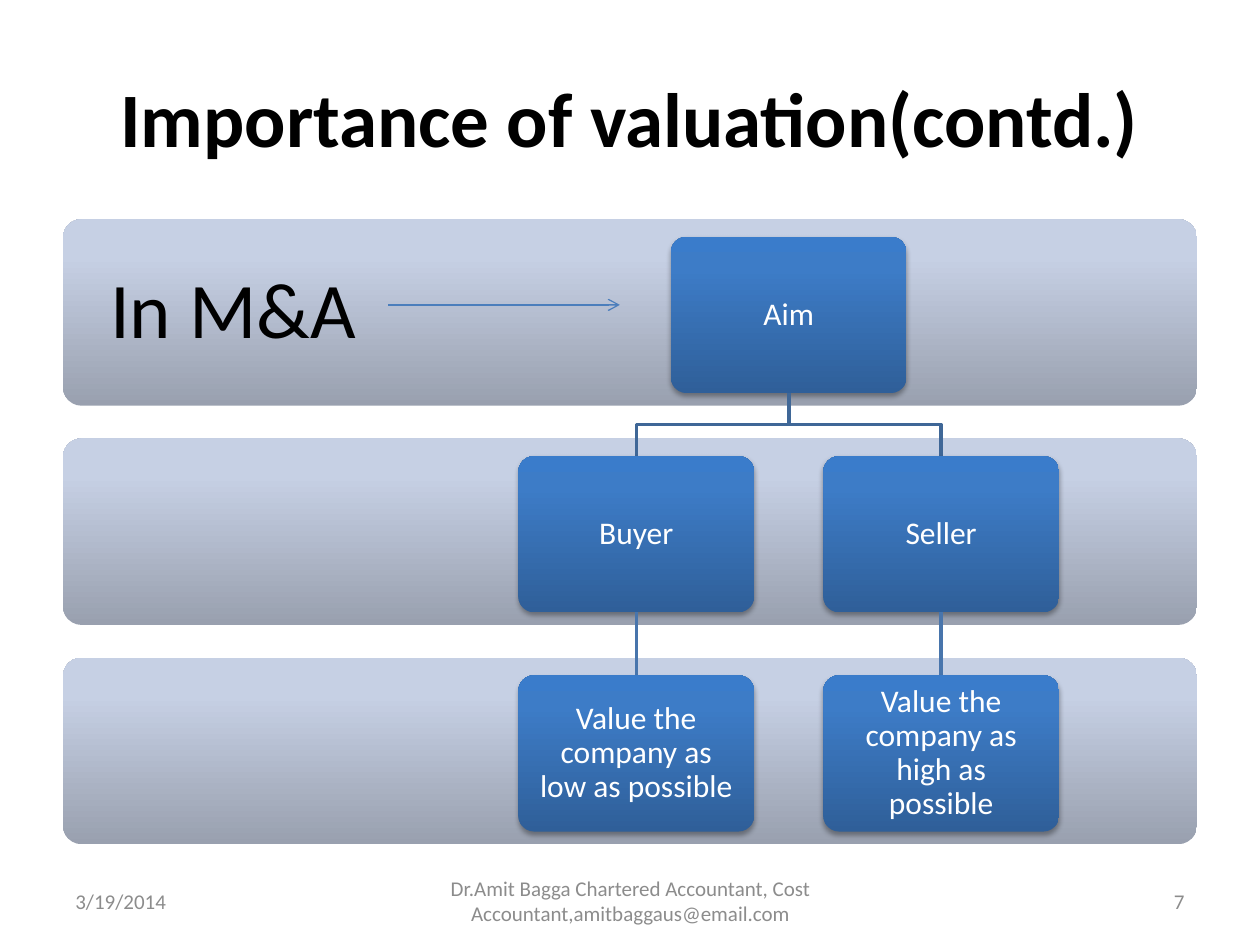
from copy import deepcopy
from dataclasses import dataclass

from lxml.etree import SubElement
from pptx import Presentation
from pptx.dml.color import RGBColor
from pptx.enum.shapes import MSO_CONNECTOR as Connector, MSO_SHAPE as Shape
from pptx.enum.text import MSO_ANCHOR as Anchor, PP_ALIGN as Align
from pptx.oxml.ns import qn
from pptx.util import Inches, Pt

FONT = "Calibri"
ROW_STEP = 1.74
BAND_TOP, BAND_HEIGHT = 1.74, 1.48
CARD_TOP, CARD_WIDTH, CARD_HEIGHT = 1.88, 1.87, 1.24
BUYER_X, AIM_X, SELLER_X = 5.05, 6.26, 7.47
BAND_STOPS = [(0, "99A0AF"), (0.8, "C6D0E4"), (1, "C7D1E5")]
CARD_STOPS = [(0, "2F5F99"), (0.8, "3D7CC7"), (1, "3A7CCB")]


@dataclass
class Card:
    text: str
    center: float
    row: int

    @property
    def top(self) -> float:
        return CARD_TOP + self.row * ROW_STEP

    @property
    def bottom(self) -> float:
        return self.top + CARD_HEIGHT


@dataclass
class Label:
    text: str
    left: float
    top: float
    width: float
    height: float
    size: float
    color: str
    align: Align
    spacing: float = 1.0


def rgb(value: str) -> RGBColor:
    return RGBColor.from_string(value)


def write(frame, text: str, size: float, color: str, align: Align,
          spacing: float = 1.0, bold: bool = False) -> None:
    frame.word_wrap = True
    frame.vertical_anchor = Anchor.MIDDLE
    paragraph = frame.paragraphs[0]
    paragraph.alignment = align
    paragraph.line_spacing = spacing
    run = paragraph.add_run()
    run.text = text
    run.font.name, run.font.size, run.font.bold = FONT, Pt(size), bold
    run.font.color.rgb = rgb(color)


def add_panel(slide, left: float, top: float, width: float, height: float,
              stops: list[tuple[float, str]]):
    """Add a borderless rounded box with a gradient running upwards."""
    shape = slide.shapes.add_shape(Shape.ROUNDED_RECTANGLE, Inches(left), Inches(top),
                                   Inches(width), Inches(height))
    shape.adjustments[0] = 0.1
    shape.shadow.inherit = False
    shape.line.fill.background()
    shape.fill.gradient()
    shape.fill.gradient_angle = 90
    stop_list = shape._element.spPr.find(qn("a:gradFill")).find(qn("a:gsLst"))
    stop_list.append(deepcopy(stop_list[-1]))
    for stop, (position, color) in zip(shape.fill.gradient_stops, stops):
        stop.position = position
        stop.color.rgb = rgb(color)
    return shape


def add_drop_shadow(shape) -> None:
    effects = shape._element.spPr.find(qn("a:effectLst"))
    shadow = SubElement(effects, qn("a:outerShdw"), blurRad=str(Pt(3.1)),
                        dist=str(Pt(1.8)), dir="5400000", rotWithShape="0")
    color = SubElement(shadow, qn("a:srgbClr"), val="000000")
    SubElement(color, qn("a:alpha"), val="35000")


def add_card(slide, card: Card) -> None:
    shape = add_panel(slide, card.center - CARD_WIDTH / 2, card.top,
                      CARD_WIDTH, CARD_HEIGHT, CARD_STOPS)
    add_drop_shadow(shape)
    frame = shape.text_frame
    frame.margin_left = frame.margin_right = Inches(0.11)
    frame.margin_top = frame.margin_bottom = Inches(0.11)
    write(frame, card.text, 18, "FFFFFF", Align.CENTER, 0.9)


def add_line(slide, start: tuple[float, float], end: tuple[float, float],
             color: str, width: float):
    line = slide.shapes.add_connector(Connector.STRAIGHT, *map(Inches, start + end))
    line.line.color.rgb = rgb(color)
    line.line.width = Pt(width)
    SubElement(line._element.spPr, qn("a:effectLst"))
    return line


def add_branch(slide, parent: Card, child: Card) -> None:
    """Join two cards with a stepped line that turns halfway between them."""
    middle = (parent.bottom + child.top) / 2
    points = [(parent.center, middle), (child.center, middle), (child.center, child.top)]
    builder = slide.shapes.build_freeform(Inches(parent.center), Inches(parent.bottom))
    builder.add_line_segments([(Inches(x), Inches(y)) for x, y in points], close=False)
    shape = builder.convert_to_shape()
    shape.shadow.inherit = False
    shape.fill.background()
    shape.line.color.rgb = rgb("3F6797")
    shape.line.width = Pt(2)


def add_label(slide, label: Label) -> None:
    box = slide.shapes.add_textbox(Inches(label.left), Inches(label.top),
                                   Inches(label.width), Inches(label.height))
    write(box.text_frame, label.text, label.size, label.color, label.align, label.spacing)


def main() -> None:
    presentation = Presentation()
    presentation.slide_width, presentation.slide_height = Inches(10), Inches(7.5)
    slide = presentation.slides.add_slide(presentation.slide_layouts[5])

    title = slide.shapes.title
    title.left, title.top = Inches(0.5), Inches(0.3)
    title.width, title.height = Inches(9), Inches(1.25)
    write(title.text_frame, "Importance of valuation(contd.)", 44, "000000",
          Align.CENTER, bold=True)

    for row in range(3):
        add_panel(slide, 0.5, BAND_TOP + row * ROW_STEP, 9, BAND_HEIGHT, BAND_STOPS)

    aim = Card("Aim", AIM_X, 0)
    sides = [
        (Card("Buyer", BUYER_X, 1), Card("Value the company as low as possible", BUYER_X, 2)),
        (Card("Seller", SELLER_X, 1), Card("Value the company as high as possible", SELLER_X, 2)),
    ]
    add_card(slide, aim)
    for party, goal in sides:
        add_branch(slide, aim, party)
        add_card(slide, party)
        add_line(slide, (party.center, party.bottom), (goal.center, goal.top), "4875AC", 2)
        add_card(slide, goal)

    arrow = add_line(slide, (3.08, 2.42), (4.92, 2.42), "4B7EBC", 0.75)
    SubElement(arrow.line._get_or_add_ln(), qn("a:tailEnd"), type="arrow")

    footer = "Dr.Amit Bagga Chartered Accountant, Cost Accountant,amitbaggaus@email.com"
    labels = [
        Label("In M&A", 0.5, BAND_TOP, 2.7, BAND_HEIGHT, 45, "000000", Align.CENTER, 0.9),
        Label("3/19/2014", 0.5, 6.95, 2.33, 0.4, 12, "8C8C8C", Align.LEFT),
        Label(footer, 3.42, 6.95, 3.17, 0.4, 12, "8C8C8C", Align.CENTER),
        Label("7", 7.17, 6.95, 2.33, 0.4, 12, "8C8C8C", Align.RIGHT),
    ]
    for label in labels:
        add_label(slide, label)

    presentation.save("out.pptx")


if __name__ == "__main__":
    main()
